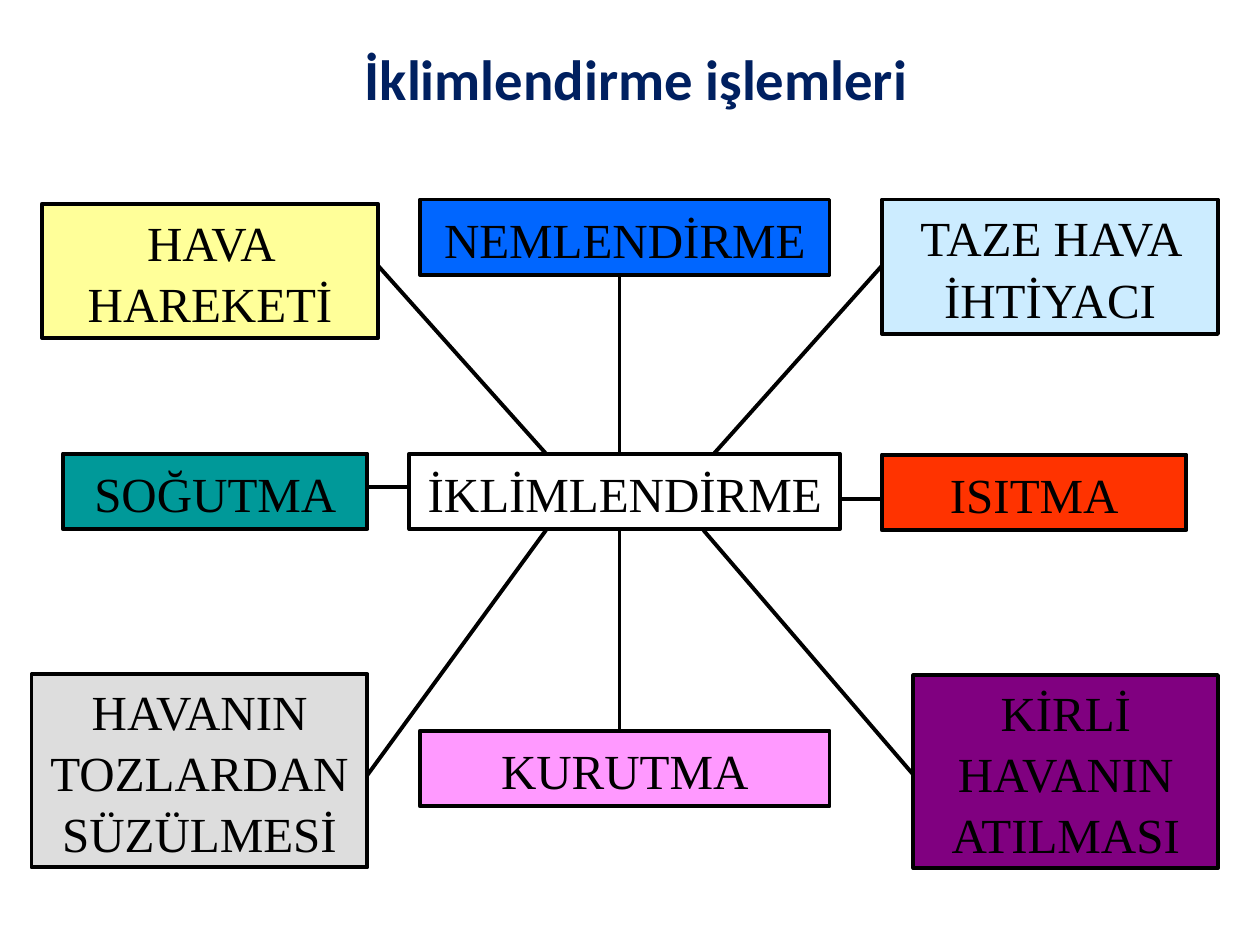
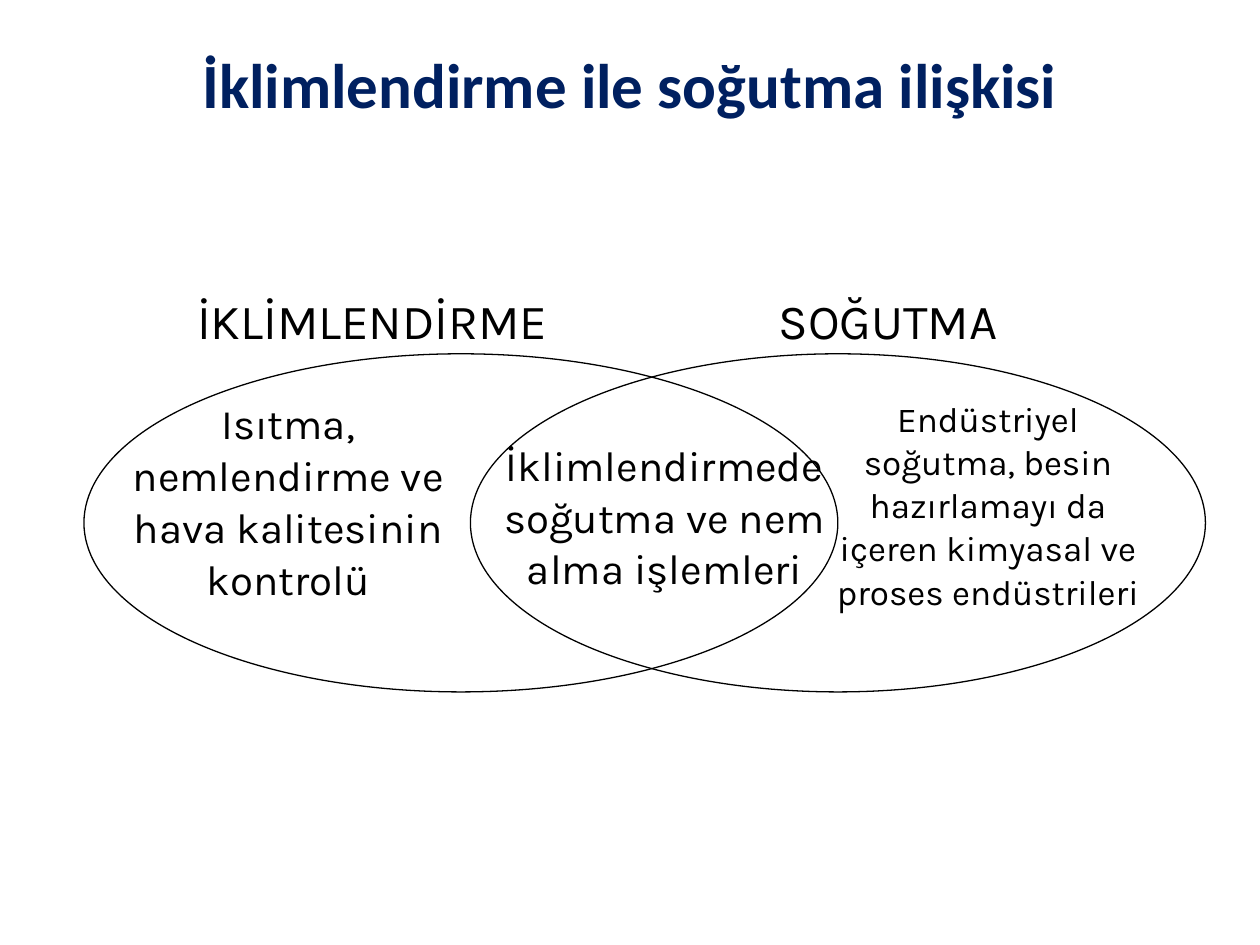
from dataclasses import dataclass

from lxml.etree import SubElement
from pptx import Presentation
from pptx.dml.color import RGBColor
from pptx.enum.shapes import MSO_CONNECTOR as Connector, MSO_SHAPE as Shape
from pptx.enum.text import MSO_ANCHOR as Anchor, MSO_AUTO_SIZE as AutoSize, PP_ALIGN as Align
from pptx.oxml.ns import qn
from pptx.util import Inches, Pt

# Shared look: a grid of 120 columns by 90 rows, each cell 1/12 inch
COLUMNS, ROWS = 120, 90
CELL = Inches(10) / COLUMNS
NAVY, BLACK = "002060", "000000"
TITLE_FONT, BOX_FONT, VENN_FONT = "Calibri", "Times New Roman", "Karla"


@dataclass
class Region:
    """A part of the page; everything inside is counted in cells from its corner."""
    column: float
    row: float

    def point(self, column, row):
        return round((self.column + column) * CELL), round((self.row + row) * CELL)

    def box(self, column, row, width, height):
        return *self.point(column, row), round(width * CELL), round(height * CELL)


def color(code):
    return RGBColor.from_string(code)


def write(shape, text, font, size, ink=BLACK, bold=False, spacing=None):
    frame = shape.text_frame
    frame.word_wrap = True
    frame.auto_size = AutoSize.NONE
    frame.vertical_anchor = Anchor.MIDDLE
    para = frame.paragraphs[0]
    para.text = text
    para.alignment = Align.CENTER
    para.line_spacing = spacing
    for span in para.runs:
        span.font.name = font
        span.font.size = Pt(size)
        span.font.bold = bold
        span.font.color.rgb = color(ink)


def add_outline(page, kind, place, weight, fill=None):
    shape = page.shapes.add_shape(kind, *place)
    shape.shadow.inherit = False
    shape.line.color.rgb = color(BLACK)
    shape.line.width = Pt(weight)
    if fill:
        shape.fill.solid()
        shape.fill.fore_color.rgb = color(fill)
    else:
        shape.fill.background()
    return shape


def add_line(page, start, end, weight):
    line = page.shapes.add_connector(Connector.STRAIGHT, *start, *end)
    line.line.color.rgb = color(BLACK)
    line.line.width = Pt(weight)
    SubElement(line._element.spPr, qn("a:effectLst"))


def add_page(deck, title, place, size):
    page = deck.slides.add_slide(deck.slide_layouts[5])
    heading = page.shapes.title
    heading.left, heading.top, heading.width, heading.height = place
    write(heading, title, TITLE_FONT, size, ink=NAVY, bold=True)
    return page


def draw_processes(page, region):
    hub_top, hub_bottom = 24.2, 31.5
    # Boxes: text, column, row, width, lines of text, fill
    boxes = [
        ("İKLİMLENDİRME", 36, hub_top, 41, 1, None),
        ("ISITMA", 81, 24.3, 29, 1, "FF3300"),
        ("SOĞUTMA", 3, hub_top, 29, 1, "009999"),
        ("NEMLENDİRME", 37, 0, 39, 1, "0066FF"),
        ("KURUTMA", 37, 50.6, 39, 1, "FF99FF"),
        ("HAVA HAREKETİ", 1, 0.4, 32, 2, "FFFF99"),
        ("TAZE HAVA İHTİYACI", 81, 0, 32, 2, "CCECFF"),
        ("KİRLİ HAVANIN ATILMASI", 84, 45.3, 29, 3, "800080"),
        ("HAVANIN TOZLARDAN\vSÜZÜLMESİ", 0, 45.2, 32, 3, "DDDDDD"),
    ]
    for text, column, row, width, lines, fill in boxes:
        place = region.box(column, row, width, 1.6 + 5.6 * lines)
        box = add_outline(page, Shape.RECTANGLE, place, 2.25, fill)
        write(box, text, BOX_FONT, 28, spacing=1.04)

    # Spokes from the outer boxes to the hub
    spokes = [
        ((56, 50.6), (56, hub_bottom)),
        ((56, 7.2), (56, hub_top)),
        ((32, 54.8), (49, hub_bottom)),
        ((33, 6.3), (49, hub_top)),
        ((81, 6.3), (65, hub_top)),
        ((84, 54.8), (64, hub_bottom)),
        ((32, 27.4), (36, 27.4)),
        ((81, 28.5), (77, 28.5)),
    ]
    for start, end in spokes:
        add_line(page, region.point(*start), region.point(*end), 2.25)


def draw_venn(page, region):
    # Overlapping ellipses
    for column, width in ((0, 71.8), (36.8, 70)):
        add_outline(page, Shape.OVAL, region.box(column, 6.7, width, 32.2), 0.75)

    # Labels: text, size, column, row, width, height
    labels = [
        ("Isıtma, nemlendirme ve hava kalitesinin kontrolü", 24, 2, 10.4, 34.9, 20.4),
        ("İklimlendirmede soğutma ve nem alma işlemleri", 24, 35.9, 14.3, 38.8, 15.6),
        ("Endüstriyel soğutma, besin hazırlamayı da içeren kimyasal ve proses endüstrileri",
         20, 70, 10.4, 32.2, 21.2),
        ("İKLİMLENDİRME", 28, 7.6, 0, 39.7, 6.8),
        ("SOĞUTMA", 28, 56.7, 0, 39.7, 6.8),
    ]
    for text, size, *place in labels:
        label = page.shapes.add_textbox(*region.box(*place))
        write(label, text, VENN_FONT, size, spacing=1.03)


def main():
    deck = Presentation()
    deck.slide_width, deck.slide_height = round(COLUMNS * CELL), round(ROWS * CELL)
    whole = Region(0, 0)

    page = add_page(deck, "İklimlendirme işlemleri", whole.box(5.2, 3.4, 110.8, 8), 32.4)
    draw_processes(page, Region(3, 19))

    page = add_page(deck, "İklimlendirme ile soğutma ilişkisi", whole.box(6, 3.6, 108, 8.6), 36)
    draw_venn(page, Region(8, 27))

    deck.save("out.pptx")


if __name__ == "__main__":
    main()
